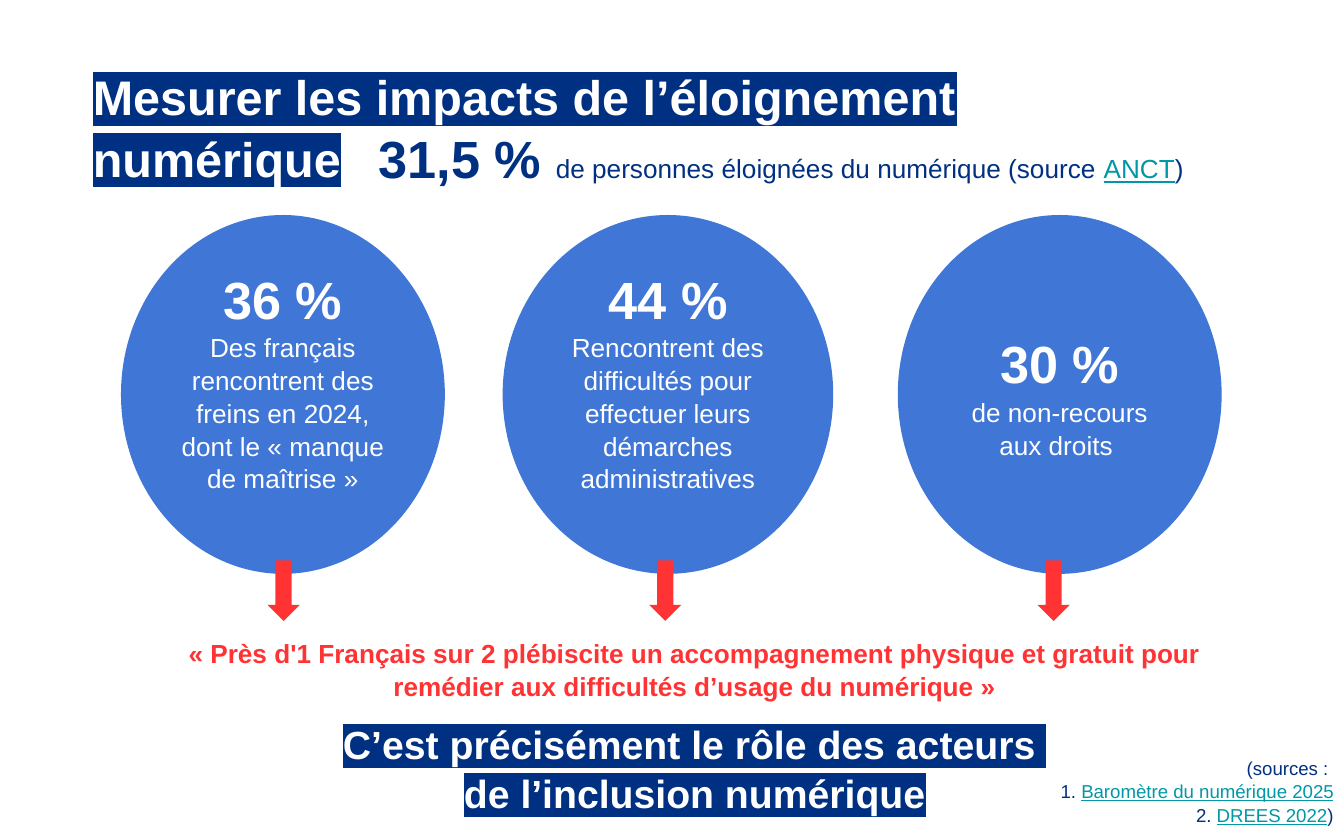
from lxml import etree
from pptx import Presentation
from pptx import util as u
from pptx.dml.color import RGBColor
from pptx.enum import shapes, text
from pptx.oxml.ns import qn

COLOURS = {"navy": "003081", "blue": "4077D7", "red": "FF3333",
           "link": "0097A7", "white": "FFFFFF"}
LEFT, CENTER, RIGHT = text.PP_ALIGN.LEFT, text.PP_ALIGN.CENTER, text.PP_ALIGN.RIGHT
FONT, LINE_SPACING = "Arial", 1.05

# A paragraph is a list of (words, style) runs; a style may hold size, colour, bold, link, mark.
BANNER = {"colour": "white", "bold": True, "mark": "navy"}
BIG = {"size": 28, "bold": True}
BODY = {"size": 14}
SOURCE = {"size": 10, "colour": "navy"}
SOURCE_LINK = {"size": 10, "colour": "link", "link": True}

TITLE = [[("Mesurer les impacts de l’éloignement numérique", {**BANNER, "size": 26})]]
HEADLINE = [[
    ("31,5\u00a0% ", {**BIG, "colour": "navy"}),
    ("de personnes éloignées du numérique (source ", {**BODY, "colour": "navy"}),
    ("ANCT", {**BODY, "colour": "link", "link": True}),
    (")", {**BODY, "colour": "navy"}),
]]
# figure, explanation, circle left, circle width, arrow left, (top, bottom) insets
FIGURES = [
    ("36 %", "Des français rencontrent des freins en 2024, dont le « manque de maîtrise »",
     0.9, 2.41, 1.99, (0, 0.23)),
    ("44 %", "Rencontrent des difficultés pour effectuer leurs démarches administratives",
     3.74, 2.46, 4.83, (0, 0.23)),
    ("30 %", "de non-recours aux droits ", 6.68, 2.41, 7.72, (0.1, 0.1)),
]
QUOTE = [[("« Près d'1 Français sur 2 plébiscite un accompagnement physique et gratuit pour "
           "remédier aux difficultés d’usage du numérique »",
           {**BODY, "colour": "red", "bold": True})]]
CONCLUSION = [[(line, {**BANNER, "size": 21})] for line in
              ("C’est précisément le rôle des acteurs ", "de l’inclusion numérique")]
SOURCES = [
    [("(sources : ", SOURCE)],
    [("1. ", SOURCE), ("Baromètre du numérique 2025", SOURCE_LINK)],
    [("2. ", SOURCE), ("DREES 2022", SOURCE_LINK), (")", SOURCE)],
]


def rgb(name):
    return RGBColor.from_string(COLOURS[name])


def highlight(run, name):
    mark = etree.Element(qn("a:highlight"))
    etree.SubElement(mark, qn("a:srgbClr"), val=COLOURS[name])
    run.font.fill._xPr.find(qn("a:solidFill")).addnext(mark)


def write(shape, paragraphs, align, insets, anchor=text.MSO_ANCHOR.TOP):
    """Fill a shape with styled paragraphs; insets are (side, top, bottom)."""
    frame = shape.text_frame
    frame.word_wrap = True
    frame.auto_size = text.MSO_AUTO_SIZE.NONE
    frame.vertical_anchor = anchor
    side, top, bottom = map(u.Inches, insets)
    frame.margin_left = frame.margin_right = side
    frame.margin_top, frame.margin_bottom = top, bottom
    for index, runs in enumerate(paragraphs):
        paragraph = frame.add_paragraph() if index else frame.paragraphs[0]
        paragraph.alignment = align
        paragraph.line_spacing = LINE_SPACING
        paragraph.space_before = paragraph.space_after = u.Pt(0)
        for words, style in runs:
            run = paragraph.add_run()
            run.text = words
            run.font.name = FONT
            run.font.size = u.Pt(style["size"])
            run.font.bold = style.get("bold", False)
            run.font.underline = style.get("link", False)
            run.font.color.rgb = rgb(style.get("colour", "white"))
            if "mark" in style:
                highlight(run, style["mark"])


def add_text(slide, box, paragraphs, align, insets):
    write(slide.shapes.add_textbox(*map(u.Inches, box)), paragraphs, align, insets)


def add_filled(slide, kind, box, colour):
    shape = slide.shapes.add_shape(kind, *map(u.Inches, box))
    shape.shadow.inherit = False
    shape.fill.solid()
    shape.fill.fore_color.rgb = rgb(colour)
    shape.line.fill.background()
    return shape


def main():
    deck = Presentation()
    deck.slide_width, deck.slide_height = u.Inches(10), u.Inches(6.25)
    slide = deck.slides.add_slide(deck.slide_layouts[5])

    title = slide.shapes.title
    title.left, title.top, title.width, title.height = map(u.Inches, (0.65, 0.44, 8.4, 1.04))
    write(title, TITLE, LEFT, (0.04, 0.04, 0.04))

    for figure, explanation, left, width, _, insets in FIGURES:
        circle = add_filled(slide, shapes.MSO_SHAPE.OVAL, (left, 1.6, width, 2.67), "blue")
        write(circle, [[(figure, BIG)], [(explanation, BODY)]], CENTER,
              (0.1, *insets), text.MSO_ANCHOR.MIDDLE)
    for *_, arrow_left, _ in FIGURES:
        add_filled(slide, shapes.MSO_SHAPE.DOWN_ARROW, (arrow_left, 4.17, 0.24, 0.45), "red")

    add_text(slide, (0.9, 4.63, 8.54, 0.89), QUOTE, CENTER, (0.1, 0.1, 0.1))
    add_text(slide, (2.72, 0.87, 7.11, 1.22), HEADLINE, LEFT, (0.1, 0.05, 0.05))
    add_text(slide, (0.9, 5.24, 8.54, 0.89), CONCLUSION, CENTER, (0.1, 0.1, 0.1))
    add_text(slide, (7.24, 5.51, 2.78, 1.22), SOURCES, RIGHT, (0.1, 0.11, 0.05))
    deck.save("out.pptx")


if __name__ == "__main__":
    main()
